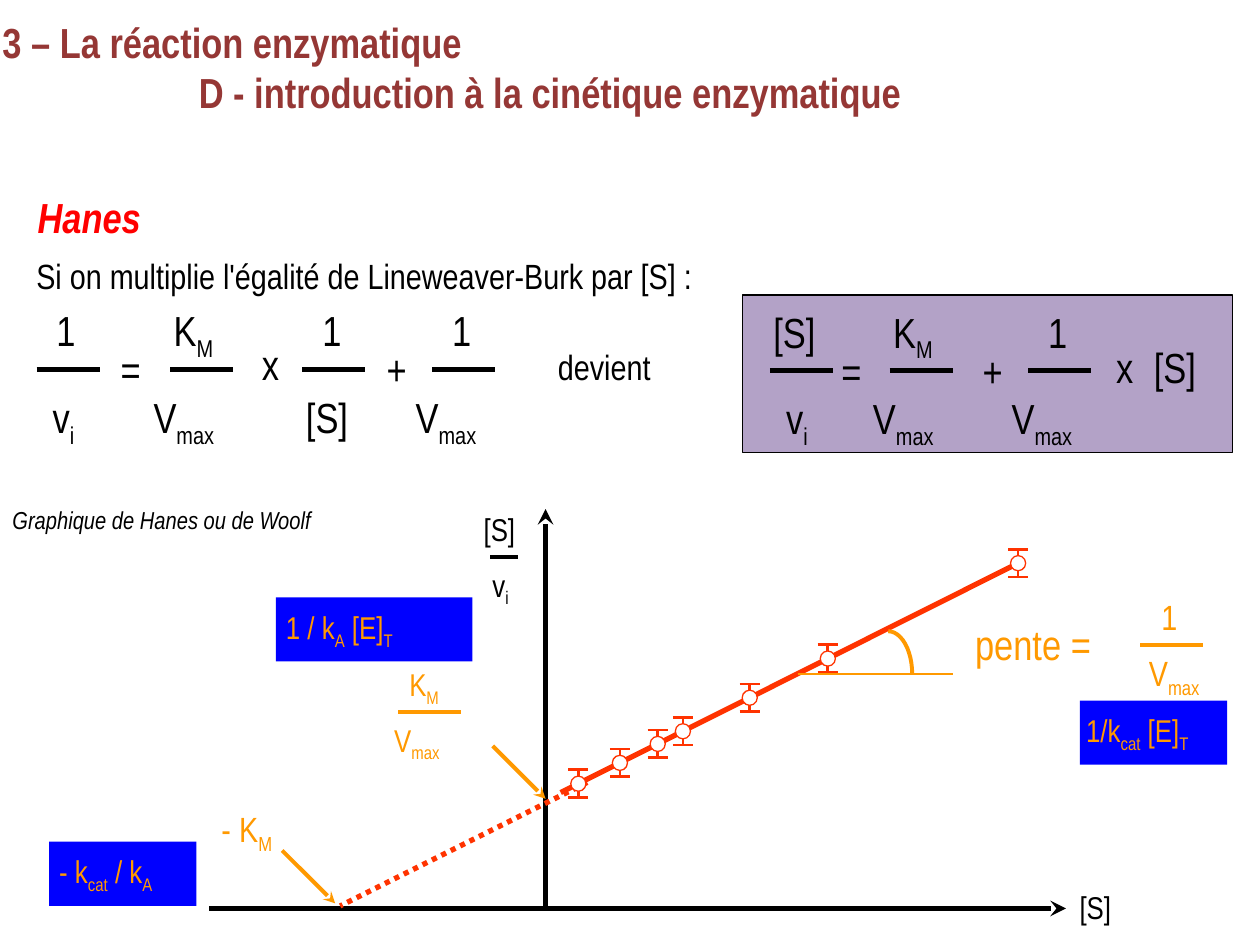
from lxml.etree import SubElement
from pptx import Presentation
from pptx.dml.color import RGBColor
from pptx.enum.dml import MSO_LINE
from pptx.enum.shapes import MSO_CONNECTOR, MSO_SHAPE
from pptx.enum.text import MSO_ANCHOR, MSO_AUTO_SIZE, PP_ALIGN
from pptx.oxml.ns import qn
from pptx.util import Inches, Pt

FONT = "Arial Narrow"
BLACK, WHITE, RED, BROWN = "000000", "FFFFFF", "FF0000", "953735"
ORANGE, CURVE, BLUE, PURPLE = "FF9900", "FF3300", "0000FF", "B3A2C7"

# Offset from the left end of the fraction bar, and width, of each term
TERMS = {
    "1": (0.06, 0.36),
    "[S]": (-0.07, 0.54),
    "K_M": (-0.07, 0.54),
    "v_i": (0.03, 0.38),
    "V_max": (-0.23, 0.81),
}


def rgb(color):
    return RGBColor.from_string(color)


def write(paragraph, content, size=24, color=BLACK, bold=False, italic=False):
    """Underscores switch between normal text and subscript: 1/k_cat_ [E]_T."""
    for index, part in enumerate(content.split("_")):
        run = paragraph.add_run()
        run.text = part
        font = run.font
        font.name, font.size = FONT, Pt(size)
        font.bold, font.italic = bold, italic
        font.color.rgb = rgb(color)
        if index % 2:
            font._element.set("baseline", "-25000")


def text(slide, content, x, y, width, size=24, **style):
    height = size / 60 + 0.1
    frame = slide.shapes.add_textbox(
        Inches(x), Inches(y), Inches(width), Inches(height)).text_frame
    frame.word_wrap = False
    frame.auto_size = MSO_AUTO_SIZE.SHAPE_TO_FIT_TEXT
    write(frame.paragraphs[0], content, size, **style)


def line(slide, x1, y1, x2, y2, color=BLACK, weight=3, arrow=False, dash=None):
    connector = slide.shapes.add_connector(
        MSO_CONNECTOR.STRAIGHT, Inches(x1), Inches(y1), Inches(x2), Inches(y2))
    connector.line.color.rgb = rgb(color)
    connector.line.width = Pt(weight)
    if dash:
        connector.line.dash_style = dash
    properties = connector._element.spPr
    if arrow:
        SubElement(properties.find(qn("a:ln")), qn("a:tailEnd"), type="stealth")
    SubElement(properties, qn("a:effectLst"))


def shape(slide, kind, x, y, width, height, fill=None, outline=None, weight=0.75):
    figure = slide.shapes.add_shape(
        kind, Inches(x), Inches(y), Inches(width), Inches(height))
    figure.shadow.inherit = False
    if fill:
        figure.fill.solid()
        figure.fill.fore_color.rgb = rgb(fill)
    else:
        figure.fill.background()
    if outline:
        figure.line.color.rgb = rgb(outline)
        figure.line.width = Pt(weight)
    else:
        figure.line.fill.background()
    return figure


def heading(slide, left, top, width, height):
    frame = slide.shapes.add_textbox(
        Inches(left), Inches(top), Inches(width), Inches(height)).text_frame
    frame.word_wrap = True
    chapter, section = frame.paragraphs[0], frame.add_paragraph()
    write(chapter, "3 – La réaction enzymatique", color=BROWN, bold=True)
    write(section, "D - introduction à la cinétique enzymatique",
          color=BROWN, bold=True)
    chapter.alignment = section.alignment = PP_ALIGN.JUSTIFY
    section._p.get_or_add_pPr().set("marL", str(Inches(1.56)))


def equation(slide, left, top, fractions, signs):
    """fractions: (dx, numerator, denominator); signs: (dx, dy, sign, width)."""
    for dx, numerator, denominator in fractions:
        bar = left + dx
        for term, dy in ((numerator, 0), (denominator, 0.69)):
            offset, width = TERMS[term]
            text(slide, term, bar + offset, top + dy, width)
        line(slide, bar, top + 0.56, bar + 0.5, top + 0.56)
    for dx, dy, sign, width in signs:
        text(slide, sign, left + dx, top + dy, width)


def hanes_equation(slide, left, top, width, height):
    shape(slide, MSO_SHAPE.RECTANGLE, left, top, width, height, PURPLE, BLACK)
    equation(slide, left + 0.22, top + 0.04,
             [(0, "[S]", "v_i"), (0.95, "K_M", "V_max"), (2.05, "1", "V_max")],
             [(0.47, 0.31, "=", 0.36), (1.59, 0.31, "+", 0.36),
              (2.65, 0.28, "x", 0.34), (2.95, 0.28, "[S]", 0.54)])


def measured_point(slide, x, y):
    half_cap, half_bar, radius = 0.08, 0.11, 0.06
    line(slide, x, y - half_bar, x, y + half_bar, CURVE, 1.5)
    for cap in (y - half_bar, y + half_bar):
        line(slide, x - half_cap, cap, x + half_cap, cap, CURVE, 1.5)
    shape(slide, MSO_SHAPE.OVAL, x - radius, y - radius,
          2 * radius, 2 * radius, WHITE, CURVE)


def axes(slide, left, top):
    line(slide, left + 1.27, top + 3.21, left + 8.07, top + 3.21, arrow=True)
    line(slide, left + 3.94, top + 3.21, left + 3.94, top + 0.04, arrow=True)
    text(slide, "[S]", left + 8.08, top + 3, 0.46, size=18)
    text(slide, "[S]", left + 3.35, top, 0.46, size=18)
    text(slide, "v_i", left + 3.42, top + 0.44, 0.34, size=18)
    line(slide, left + 3.5, top + 0.42, left + 3.72, top + 0.42, weight=2.25)


def regression(slide, left, top):
    x1, y1, x2, y2 = left + 4.06, top + 2.29, left + 7.71, top + 0.46
    slope = (y2 - y1) / (x2 - x1)
    line(slide, left + 4.27, top + 2.21, left + 2.31, top + 3.19,
         CURVE, dash=MSO_LINE.ROUND_DOT)
    line(slide, x1, y1, x2, y2, CURVE)
    for dx in (4.2, 4.53, 4.83, 5.03, 5.56, 6.18, 7.69):
        x = left + dx
        measured_point(slide, x, y1 + slope * (x - x1))


def constant(slide, content, x, y, width, inset=0.08):
    """Blue plate with the constant in terms of rate constants."""
    plate = shape(slide, MSO_SHAPE.RECTANGLE, x, y, width, 0.51, BLUE)
    frame = plate.text_frame
    frame.word_wrap = False
    frame.vertical_anchor = MSO_ANCHOR.MIDDLE
    frame.margin_left = Inches(inset + 0.1)
    frame.paragraphs[0].alignment = PP_ALIGN.LEFT
    write(frame.paragraphs[0], content, size=18, color=ORANGE)


def annotations(slide, left, top):
    for content, dx, dy, width, size in (
            ("K_M", 2.76, 1.23, 0.46, 18), ("V_max", 2.64, 1.67, 0.66, 18),
            ("- K_M", 1.27, 2.36, 0.63, 20), ("pente =", 7.25, 0.86, 1.14, 24),
            ("1", 8.73, 0.68, 0.33, 20), ("V_max", 8.63, 1.12, 0.69, 20)):
        text(slide, content, left + dx, top + dy, width, size, color=ORANGE)
    for dx, dy in ((2.77, 1.65), (8.66, 1.12)):
        line(slide, left + dx, top + dy, left + dx + 0.5, top + dy, ORANGE, 2.25)
    for dx, dy in ((3.52, 1.92), (1.85, 2.75)):
        line(slide, left + dx, top + dy, left + dx + 0.42, top + dy + 0.42,
             ORANGE, 2.25, arrow=True)
    line(slide, left + 5.94, top + 1.35, left + 7.17, top + 1.35, ORANGE, 1)
    shape(slide, MSO_SHAPE.ARC, left + 6.47, top + 1.01, 0.38, 0.68,
          outline=ORANGE, weight=2.25)
    constant(slide, "1/k_cat_ [E]_T", left + 8.18, top + 1.56, 1.17, inset=-0.05)
    constant(slide, "- k_cat_ / k_A", left, top + 2.68, 1.17, inset=-0.02)
    constant(slide, "1 / k_A_ [E]_T", left + 1.8, top + 0.74, 1.56, inset=-0.02)


def hanes_plot(slide, left, top):
    for layer in (axes, regression, annotations):
        layer(slide, left, top)


def main():
    deck = Presentation()
    deck.slide_width, deck.slide_height = Inches(10), Inches(7.5)
    slide = deck.slides.add_slide(deck.slide_layouts[6])
    heading(slide, -0.08, 0.08, 10, 0.91)
    text(slide, "Hanes", 0.2, 1.47, 1.03, color=RED, bold=True, italic=True)
    text(slide, "Si on multiplie l'égalité de Lineweaver-Burk par [S] :",
         0.19, 1.97, 5.44, size=20)
    equation(slide, 0.29, 2.37,
             [(0, "1", "v_i"), (1.06, "K_M", "V_max"),
              (2.11, "1", "[S]"), (3.14, "1", "V_max")],
             [(0.57, 0.31, "=", 0.36), (1.69, 0.27, "x", 0.34),
              (2.68, 0.31, "+", 0.36)])
    text(slide, "devient", 4.33, 2.69, 0.94, size=20)
    hanes_equation(slide, 5.89, 2.34, 3.89, 1.25)
    text(slide, "Graphique de Hanes ou de Woolf", 0, 3.96, 2.59,
         size=14, italic=True)
    hanes_plot(slide, 0.39, 4)
    deck.save("out.pptx")


if __name__ == "__main__":
    main()
